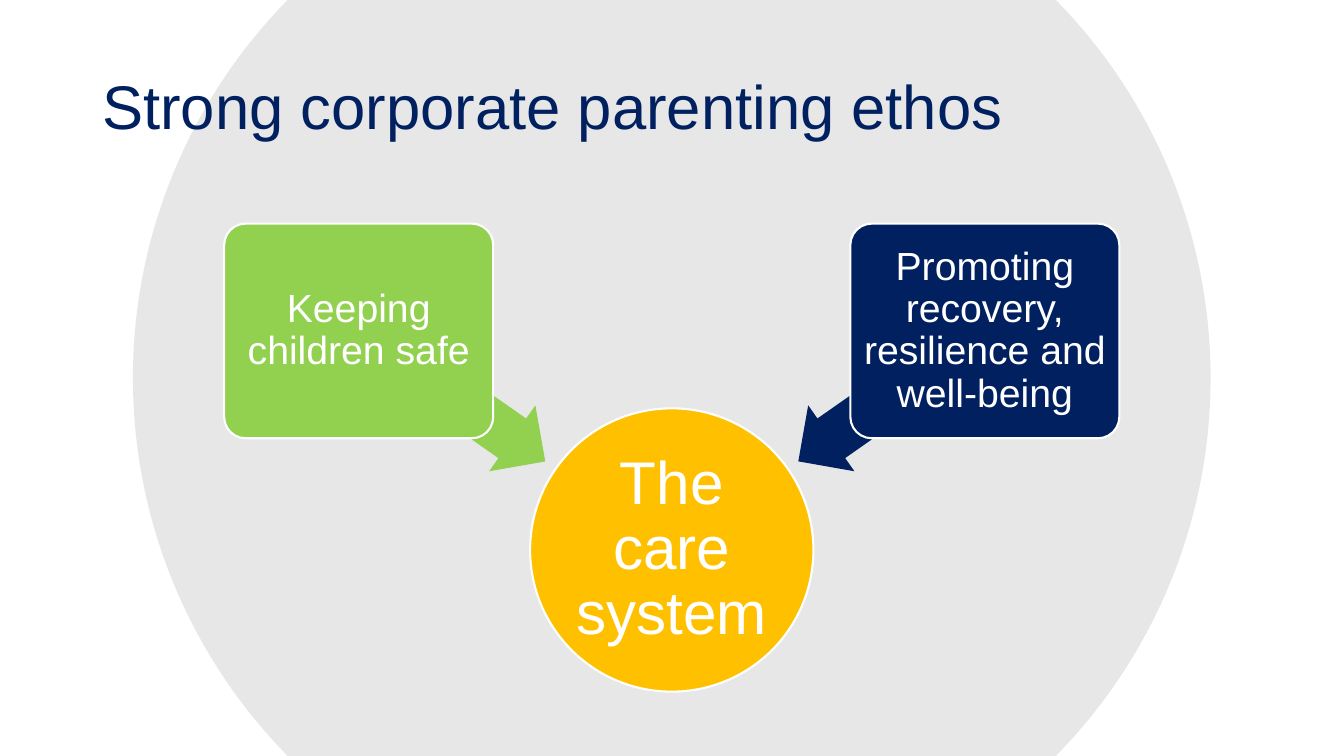
from math import asin, cos, pi, sin

from lxml.etree import SubElement
from pptx import Presentation
from pptx.dml.color import RGBColor
from pptx.enum.shapes import MSO_SHAPE
from pptx.enum.text import MSO_ANCHOR, MSO_AUTO_SIZE, PP_ALIGN
from pptx.oxml.ns import qn
from pptx.util import Cm, Pt

NAVY = RGBColor(0x00, 0x20, 0x60)
GREEN = RGBColor(0x92, 0xD0, 0x50)
AMBER = RGBColor(0xFF, 0xC0, 0x00)
GREY = RGBColor(0xD9, 0xD9, 0xD9)
WHITE = RGBColor(0xFF, 0xFF, 0xFF)

SLIDE_WIDTH, SLIDE_HEIGHT = 33.87, 19.05
CENTRE_X, CENTRE_Y = 16.93, SLIDE_HEIGHT / 2
DISC_RADIUS = 13.58
ARC_STEPS = 60


def set_attributes(target, values):
    for name, value in values.items():
        setattr(target, name, value)


def write_text(shape, text, size, colour, alignment, margin):
    frame = shape.text_frame
    frame.text = text
    set_attributes(frame, {
        "word_wrap": True,
        "auto_size": MSO_AUTO_SIZE.NONE,
        "vertical_anchor": MSO_ANCHOR.MIDDLE,
        "margin_left": margin,
        "margin_right": margin,
        "margin_top": margin,
        "margin_bottom": margin,
    })
    para = frame.paragraphs[0]
    set_attributes(para, {"alignment": alignment, "line_spacing": 0.9})
    span = para.runs[0]
    set_attributes(span.font, {"name": "Arial", "size": Pt(size)})
    span.font.color.rgb = colour


def paint(shape, fill, line=None):
    shape.shadow.inherit = False
    shape.fill.solid()
    shape.fill.fore_color.rgb = fill
    if line is None:
        shape.line.fill.background()
    else:
        shape.line.color.rgb = line
        shape.line.width = Pt(1.5)


def add_centred(page, kind, centre_x, centre_y, width, height):
    return page.shapes.add_shape(
        kind, Cm(centre_x - width / 2), Cm(centre_y - height / 2),
        Cm(width), Cm(height))


def add_title(page, text):
    title = page.shapes.title
    set_attributes(title, {"left": Cm(2.33), "top": Cm(0.91),
                           "width": Cm(29.21), "height": Cm(3.68)})
    write_text(title, text, 44, NAVY, PP_ALIGN.LEFT, Cm(0.25))


def add_background_disc(page):
    limit = asin(CENTRE_Y / DISC_RADIUS)
    sweep = [-limit + 2 * limit * step / ARC_STEPS
             for step in range(ARC_STEPS + 1)]
    angles = sweep + [angle + pi for angle in sweep]
    points = [(Cm(CENTRE_X + DISC_RADIUS * cos(angle)),
               Cm(CENTRE_Y + DISC_RADIUS * sin(angle))) for angle in angles]
    builder = page.shapes.build_freeform(*points[0])
    builder.add_line_segments(points[1:], close=True)
    disc = builder.convert_to_shape()
    paint(disc, GREY)
    colour = disc.fill._xPr.find(qn("a:solidFill"))[0]
    SubElement(colour, qn("a:alpha"), val="62000")
    page.shapes.title.element.addprevious(disc.element)


def add_hub(page, text):
    hub = add_centred(page, MSO_SHAPE.OVAL, CENTRE_X, 13.86, 7.14, 7.14)
    paint(hub, AMBER, WHITE)
    write_text(hub, text, 43, WHITE, PP_ALIGN.CENTER, Cm(0.08))


def add_aim(page, text, side, rotation, colour):
    arrow = add_centred(page, MSO_SHAPE.LEFT_ARROW,
                        CENTRE_X + side * 5.54, 9.98, 5.74, 2.03)
    arrow.adjustments[0], arrow.adjustments[1] = 0.6, 0.5
    arrow.rotation = rotation
    paint(arrow, colour)
    box = add_centred(page, MSO_SHAPE.ROUNDED_RECTANGLE,
                      CENTRE_X + side * 7.89, 8.34, 6.78, 5.41)
    box.adjustments[0] = 0.1
    paint(box, colour, WHITE)
    write_text(box, text, 28, WHITE, PP_ALIGN.CENTER, Cm(0.14))


def main():
    deck = Presentation()
    set_attributes(deck, {"slide_width": Cm(SLIDE_WIDTH),
                          "slide_height": Cm(SLIDE_HEIGHT)})
    page = deck.slides.add_slide(deck.slide_layouts.get_by_name("Title Only"))
    add_background_disc(page)
    add_title(page, "Strong corporate parenting ethos")
    add_hub(page, "The care system")
    add_aim(page, "Keeping children safe", -1, 215, GREEN)
    add_aim(page, "Promoting recovery, resilience and well-being", 1, 325, NAVY)
    deck.save("out.pptx")


if __name__ == "__main__":
    main()
